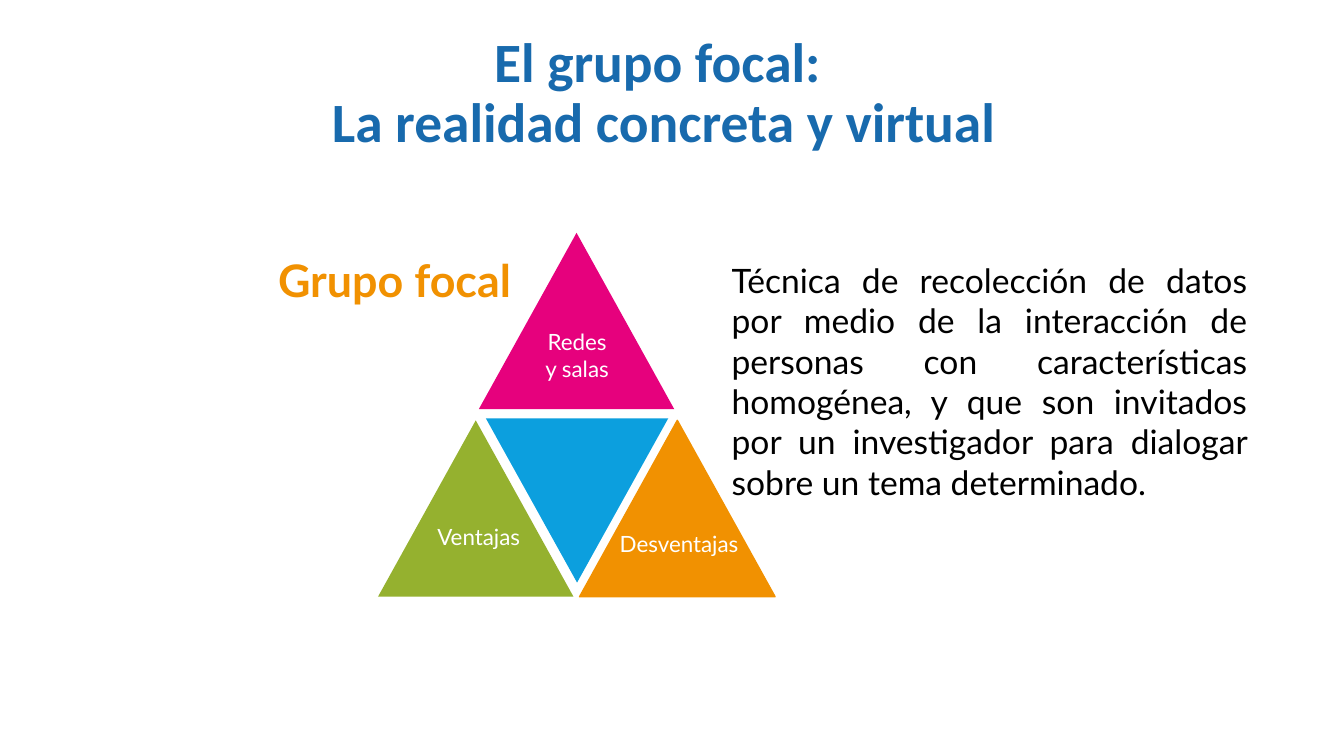
from pptx import Presentation
from pptx.dml.color import RGBColor
from pptx.enum.shapes import MSO_SHAPE
from pptx.enum.text import MSO_ANCHOR, MSO_AUTO_SIZE, PP_ALIGN
from pptx.util import Inches, Pt

UP, DOWN = MSO_SHAPE.FLOWCHART_EXTRACT, MSO_SHAPE.FLOWCHART_MERGE
TOP, MIDDLE = MSO_ANCHOR.TOP, MSO_ANCHOR.MIDDLE
LEFT, CENTER, JUSTIFY = PP_ALIGN.LEFT, PP_ALIGN.CENTER, PP_ALIGN.JUSTIFY
FIXED = MSO_AUTO_SIZE.NONE

NAVY = RGBColor(0x18, 0x6A, 0xAD)
PINK = RGBColor(0xE6, 0x01, 0x7D)
GREEN = RGBColor(0x95, 0xB1, 0x2F)
ORANGE = RGBColor(0xF1, 0x91, 0x01)
BLUE = RGBColor(0x0C, 0x9F, 0xDE)
WHITE = RGBColor(0xFF, 0xFF, 0xFF)
BLACK = RGBColor(0, 0, 0)

COLS, ROWS = 40, 30


class Board:
    """Places elements on a grid of COLS by ROWS cells."""

    def __init__(self, deck):
        self.slide = deck.slides.add_slide(deck.slide_layouts[5])
        self.col = deck.slide_width / COLS
        self.row = deck.slide_height / ROWS

    def grid(self, x, y, w, h):
        """Turns columns and rows into slide lengths."""
        return (round(x * self.col), round(y * self.row),
                round(w * self.col), round(h * self.row))

    def style(self, frame, text, size, color, font="Lato", bold=False,
              align=LEFT, anchor=TOP, lines=1.0, after=0):
        frame.text = text
        frame.word_wrap = True
        frame.auto_size = FIXED
        frame.vertical_anchor = anchor
        for para in frame.paragraphs:
            para.alignment = align
            para.line_spacing = lines
            para.space_before = Pt(0)
            para.space_after = Pt(after)
            for run in para.runs:
                run.font.name = font
                run.font.size = Pt(size)
                run.font.bold = bold
                run.font.color.rgb = color

    def title(self, box, text):
        shape = self.slide.shapes.title
        shape.left, shape.top, shape.width, shape.height = self.grid(*box)
        self.style(shape.text_frame, text, 39.6, NAVY, "Calibri", True,
                   CENTER, MIDDLE, 0.9)
        shape.text_frame.margin_bottom = Inches(0.65)

    def text(self, box, text, size, color, **look):
        shape = self.slide.shapes.add_textbox(*self.grid(*box))
        self.style(shape.text_frame, text, size, color, **look)

    def piece(self, kind, box, color, edge=False):
        shape = self.slide.shapes.add_shape(kind, *self.grid(*box))
        shape.shadow.inherit = False
        shape.fill.solid()
        shape.fill.fore_color.rgb = color
        if edge:
            shape.line.color.rgb = color
            shape.line.width = Pt(1)
        else:
            shape.line.fill.background()


def main():
    deck = Presentation()
    deck.slide_width, deck.slide_height = Inches(13.33), Inches(7.5)
    board = Board(deck)
    board.title((9.42, 2.04, 20.67, 5.8),
                "El grupo focal: \vLa realidad concreta y virtual")

    peak, step, high, low = 14.25, 3, 9.24, 16.68
    for shift, y, color in ((0, high, PINK), (-step, low, GREEN),
                            (step, low, ORANGE)):
        board.piece(UP, (peak + shift, y, 5.82, 7), color, color == ORANGE)
    board.piece(DOWN, (14.46, 16.6, 5.43, 6.52), BLUE)

    board.text((7.98, 9.36, 7.83, 3.24), "Grupo focal", 32, ORANGE,
               bold=True, anchor=MIDDLE, lines=1.1)
    for box, label, align in (
            ((12.72, 20.56, 4.44, 1.48), "Ventajas", LEFT),
            ((18.15, 20.84, 4.44, 1.48), "Desventajas", LEFT),
            ((15.54, 12.84, 3.27, 2.56), "Redes\ny salas", CENTER)):
        board.text(box, label, 16, WHITE, align=align)
    board.text((21.48, 10.12, 15.93, 10.08),
               "Técnica de recolección de datos por medio de la interacción "
               "de personas con características homogénea, y que son "
               "invitados por un investigador para dialogar sobre un tema "
               "determinado.", 24, BLACK, align=JUSTIFY, after=8)
    deck.save("out.pptx")


if __name__ == "__main__":
    main()
